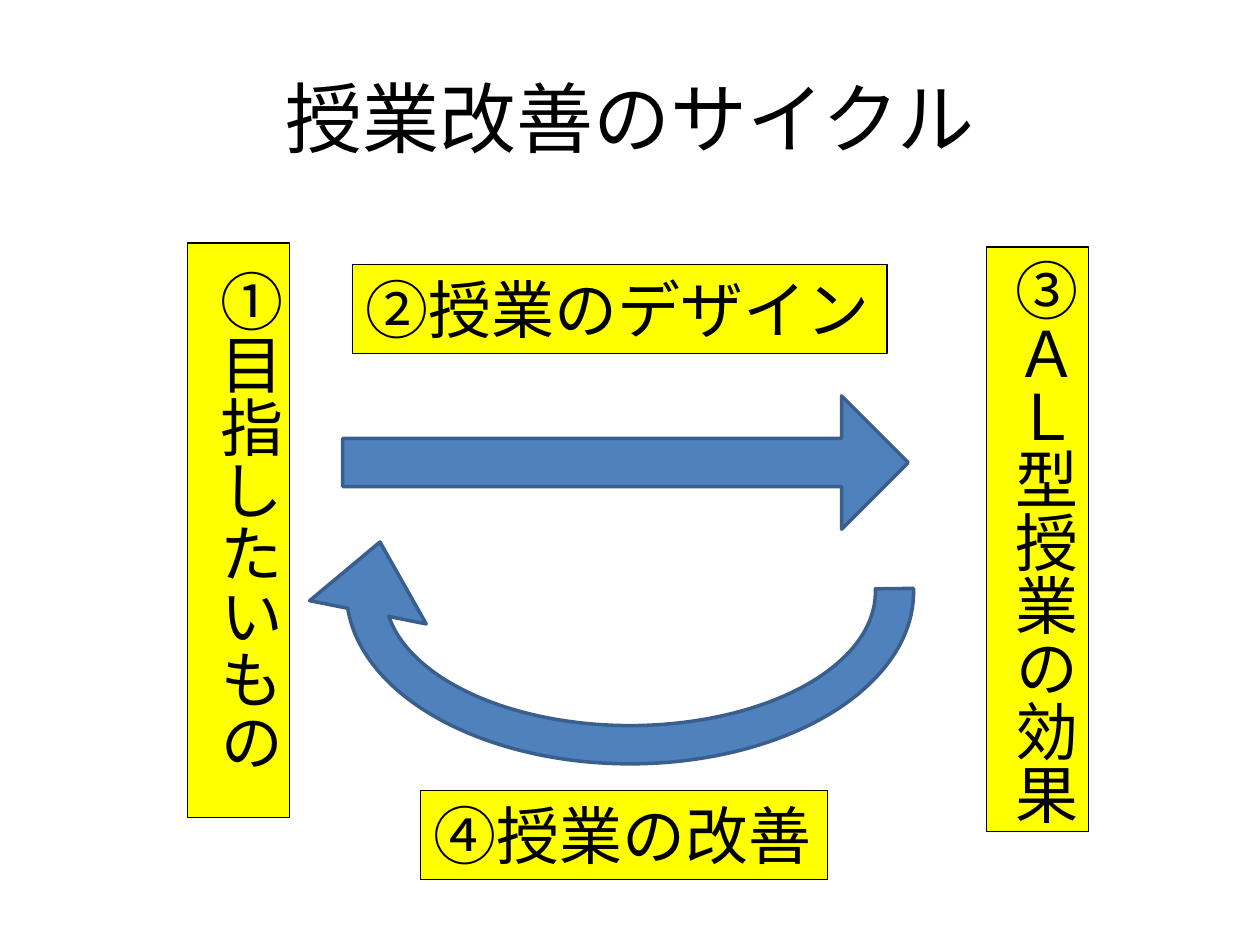
from pptx import Presentation
from pptx import util as u
from pptx.dml.color import RGBColor
from pptx.enum import shapes, text

FONT = "Roboto"
TITLE = ("授業改善のサイクル", (1.27, 0.76, 22.86, 3.18))
LABELS = [
    (" ①目指したいもの", (3.78, 4.9, 2.06, 11.58), True),
    ("③ＡＬ型授業の効果", (19.89, 4.98, 2.06, 11.79), True),
    ("②授業のデザイン", (7.11, 5.33, 10.77, 1.8), False),
    ("④授業の改善", (8.48, 15.93, 8.2, 1.8), False),
]
ARROWS = [
    (shapes.MSO_SHAPE.RIGHT_ARROW, (6.91, 7.98, 11.4, 2.69), 0,
     (0.36, 0.5)),
    (shapes.MSO_SHAPE.CIRCULAR_ARROW, (6.17, 7.65, 13.06, 8.56), 180,
     (0.09, 9.44, 213.32, 107.58, 0.14)),
]


def color(code):
    return RGBColor.from_string(code)


def write(frame, words, size, align):
    frame.text = words
    para = frame.paragraphs[0]
    para.alignment = align
    font = para.runs[0].font
    font.name = FONT
    font.size = u.Pt(size)
    font.color.rgb = color("000000")


def draw(slide, kind, box, fill, line, width):
    shape = slide.shapes.add_shape(kind, *map(u.Cm, box))
    shape.shadow.inherit = False
    shape.fill.solid()
    shape.fill.fore_color.rgb = color(fill)
    shape.line.color.rgb = color(line)
    shape.line.width = u.Pt(width)
    return shape


def label(slide, words, box, tall):
    shape = draw(slide, shapes.MSO_SHAPE.RECTANGLE, box,
                 "FFFF00", "000000", 0.75)
    frame = shape.text_frame
    write(frame, words, 36, text.PP_ALIGN.LEFT)
    frame.word_wrap = False
    frame.auto_size = text.MSO_AUTO_SIZE.SHAPE_TO_FIT_TEXT
    frame.vertical_anchor = text.MSO_ANCHOR.TOP
    if tall:
        frame._txBody.bodyPr.set("vert", "eaVert")


def arrow(slide, kind, box, turn, bends):
    shape = draw(slide, kind, box, "4F81BD", "3A5F8C", 2)
    shape.rotation = turn
    for i, bend in enumerate(bends):
        shape.adjustments[i] = bend


def main():
    deck = Presentation()
    deck.slide_width, deck.slide_height = u.Cm(25.4), u.Cm(19.05)
    slide = deck.slides.add_slide(deck.slide_layouts[5])
    title = slide.shapes.title
    words, box = TITLE
    title.left, title.top, title.width, title.height = map(u.Cm, box)
    write(title.text_frame, words, 44, text.PP_ALIGN.CENTER)
    title.text_frame.vertical_anchor = text.MSO_ANCHOR.MIDDLE
    for item in LABELS:
        label(slide, *item)
    for item in ARROWS:
        arrow(slide, *item)
    deck.save("out.pptx")


if __name__ == "__main__":
    main()
